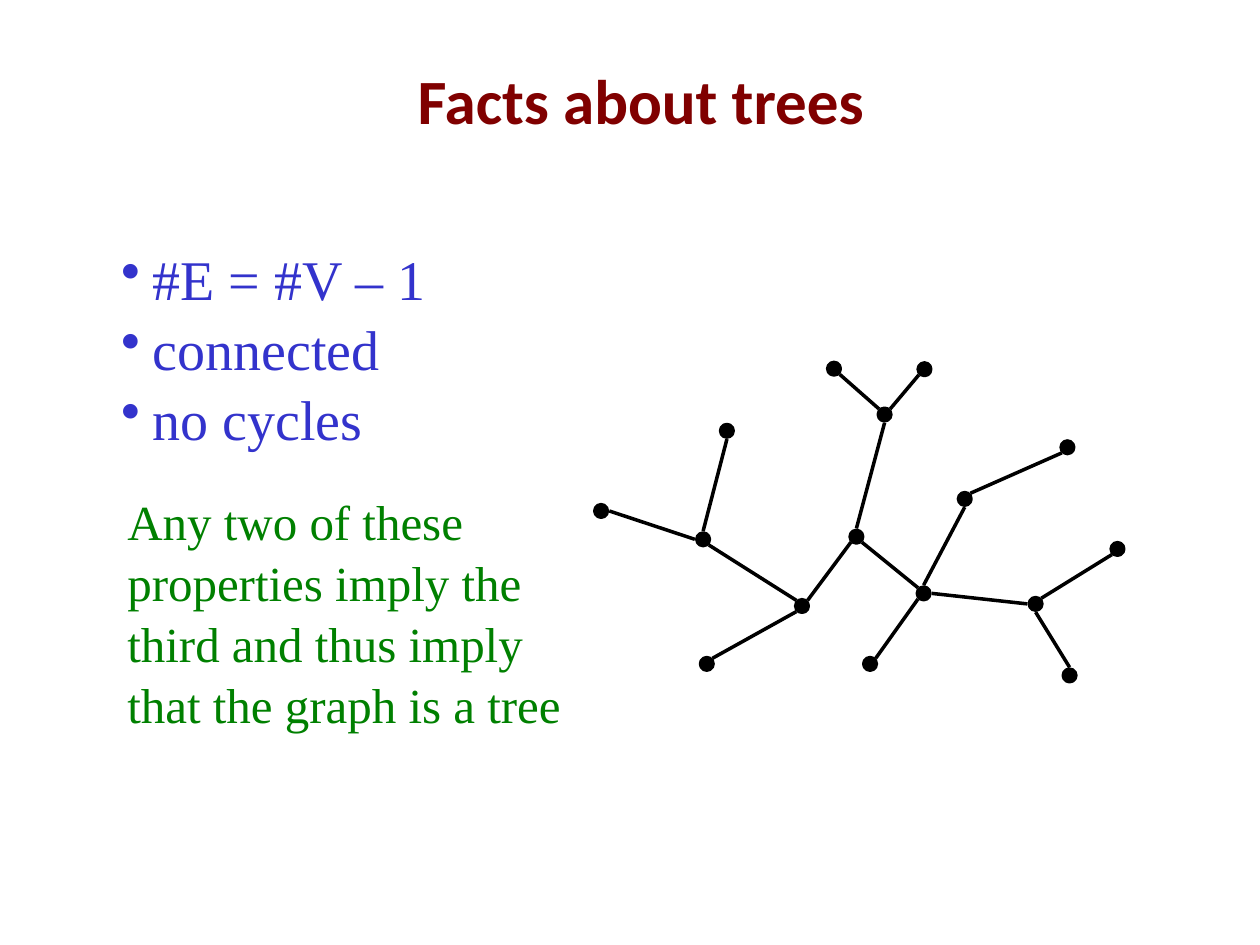
"""Build a slide on the properties of trees, with a sample tree graph."""
from dataclasses import dataclass

from lxml import etree
from pptx import Presentation
from pptx.dml.color import RGBColor
from pptx.enum import shapes, text
from pptx.oxml import ns
from pptx.util import Pt


@dataclass(frozen=True)
class Theme:
    heading: RGBColor = RGBColor(0x80, 0x00, 0x00)
    facts: RGBColor = RGBColor(0x33, 0x33, 0xCC)
    remark: RGBColor = RGBColor(0x00, 0x80, 0x00)
    graph: RGBColor = RGBColor(0x00, 0x00, 0x00)
    heading_font: str = "Calibri"
    body_font: str = "Times New Roman"
    heading_size: float = 36
    facts_size: float = 32
    remark_size: float = 28
    line_spacing: float = 1.04
    stroke: float = 2
    vertex_size: float = 7.2


THEME = Theme()

FACTS = ["#E = #V – 1", "connected", "no cycles"]
REMARK = "Any two of these properties imply the third and thus imply that the graph is a tree"

VERTICES = {
    "a": (343.5, 292), "b": (401.8, 308.2), "c": (415.4, 246.2),
    "d": (458.3, 346.3), "e": (403.9, 379.4), "f": (489.4, 306.7),
    "g": (527.8, 339.1), "h": (497.2, 379.4), "i": (505.5, 236.9),
    "j": (476.6, 210.7), "k": (528.3, 211), "l": (551.3, 285.1),
    "m": (610, 255.6), "n": (591.8, 345.1), "o": (638.6, 313.7),
    "p": (611.2, 386),
}
EDGES = ["ab", "bc", "bd", "de", "df", "fg", "gh", "fi", "ij", "ik",
         "gl", "lm", "gn", "no", "np"]


def add_text_block(slide, box, lines, font, size, color, insets, bold=False,
                   align=text.PP_ALIGN.LEFT, anchor=text.MSO_ANCHOR.TOP,
                   spacing=1.0, margin=0, indent=0, bullet=None):
    block = slide.shapes.add_textbox(*map(Pt, box))
    frame = block.text_frame
    frame.word_wrap = True
    frame.vertical_anchor = anchor
    (frame.margin_left, frame.margin_top,
     frame.margin_right, frame.margin_bottom) = map(Pt, insets)
    for index, line in enumerate(lines):
        paragraph = frame.add_paragraph() if index else frame.paragraphs[0]
        paragraph.alignment = align
        paragraph.line_spacing = spacing
        run = paragraph.add_run()
        run.text = line
        run.font.name = font
        run.font.size = Pt(size)
        run.font.bold = bold
        run.font.color.rgb = color
        set_indent(paragraph, margin, indent, bullet)


def set_indent(paragraph, margin, indent, bullet):
    properties = paragraph._p.get_or_add_pPr()
    properties.set("marL", str(Pt(margin)))
    properties.set("indent", str(Pt(indent)))
    if bullet:
        mark = etree.SubElement(properties, ns.qn("a:buChar"))
        mark.set("char", bullet)


def add_vertex(slide, center):
    size = THEME.vertex_size
    left, top = (value - size / 2 for value in center)
    vertex = slide.shapes.add_shape(
        shapes.MSO_SHAPE.OVAL, Pt(left), Pt(top), Pt(size), Pt(size))
    vertex.shadow.inherit = False
    vertex.fill.solid()
    vertex.fill.fore_color.rgb = THEME.graph
    vertex.line.color.rgb = THEME.graph
    vertex.line.width = Pt(THEME.stroke)


def rim_point(center, target):
    """Return the nearest of eight compass points on the rim facing the target."""
    dx, dy = (end - start for start, end in zip(center, target))
    step_x = 0 if abs(dx) < 0.48 * abs(dy) else (1 if dx > 0 else -1)
    step_y = 0 if abs(dy) < 0.48 * abs(dx) else (1 if dy > 0 else -1)
    reach = 3.2 if step_x and step_y else 4.7
    return center[0] + reach * step_x, center[1] + reach * step_y


def add_edge(slide, start, end):
    points = rim_point(start, end) + rim_point(end, start)
    edge = slide.shapes.add_connector(
        shapes.MSO_CONNECTOR.STRAIGHT, *map(Pt, points))
    edge.line.color.rgb = THEME.graph
    edge.line.width = Pt(THEME.stroke)
    etree.SubElement(edge._element.spPr, ns.qn("a:effectLst"))


def main():
    deck = Presentation()
    deck.slide_width, deck.slide_height = Pt(720), Pt(540)
    slide = deck.slides.add_slide(deck.slide_layouts[6])

    add_text_block(slide, (48, 18, 642, 78), ["Facts about trees"],
                   THEME.heading_font, THEME.heading_size, THEME.heading,
                   (4.5, 4.5, 10, 4.5), bold=True,
                   align=text.PP_ALIGN.CENTER, anchor=text.MSO_ANCHOR.MIDDLE,
                   margin=3, indent=-3)
    add_text_block(slide, (66.2, 138.2, 229.7, 118), FACTS,
                   THEME.body_font, THEME.facts_size, THEME.facts,
                   (0, 0, 3, 0), spacing=THEME.line_spacing,
                   margin=21, indent=-18, bullet="•")
    add_text_block(slide, (69.8, 279.4, 272.2, 167), [REMARK],
                   THEME.body_font, THEME.remark_size, THEME.remark,
                   (0, 0, 3, 0), spacing=THEME.line_spacing, margin=3)

    for center in VERTICES.values():
        add_vertex(slide, center)
    for start, end in EDGES:
        add_edge(slide, VERTICES[start], VERTICES[end])

    deck.save("out.pptx")


if __name__ == "__main__":
    main()
